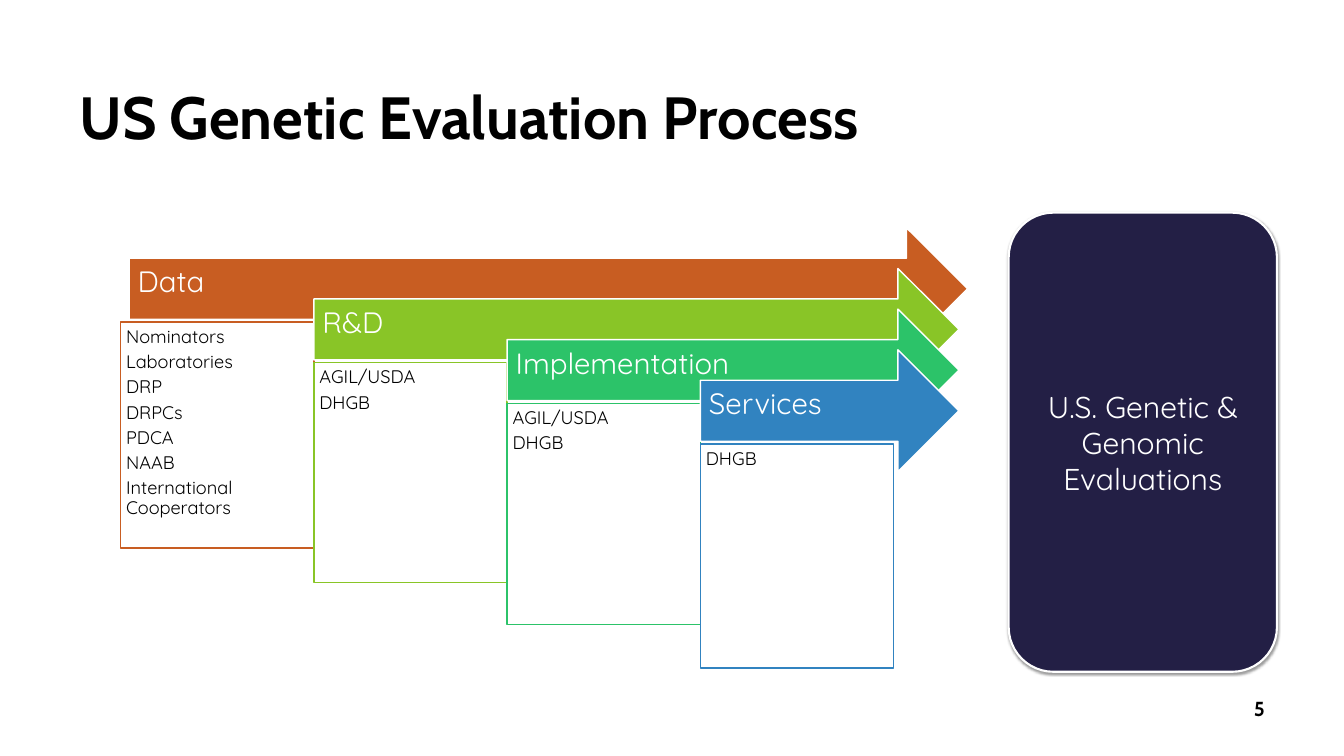
from lxml import etree
from pptx import Presentation
from pptx.dml.color import RGBColor as Rgb
from pptx.enum.shapes import MSO_SHAPE as Form
from pptx.enum.text import MSO_ANCHOR as Anchor, MSO_AUTO_SIZE as Auto, PP_ALIGN as Align
from pptx.oxml import parse_xml
from pptx.oxml.ns import nsdecls, qn
from pptx.util import Inches, Pt

WIDE, HIGH = 26.65, 15
HEAD, BODY = "Cabin", "Quicksand"
WHITE, BLACK, NAVY = "FFFFFF", "000000", "231F45"
PAD = (0.24, 0.12, 0.24, 0.12)
STAGES = [
    ("Data", "C85D22", 29.87,
     ["Nominators", "Laboratories", "DRP", "DRPCs", "PDCA", "NAAB", "International Cooperators"]),
    ("R&D", "89C527", 29.07, ["AGIL/USDA", "DHGB"]),
    ("Implementation", "2CC369", 29.27, ["AGIL/USDA", "DHGB"]),
    ("Services", "3183C0", 29.6, ["DHGB"]),
]
LEFT, TOP = 8.97, 30.13
STEP, DROP = 14.38, 5.38
TIP, SHIFT = 71.35, 0.64


def color(code):
    """Turn a hex string into a colour."""
    return Rgb.from_string(code)


def write(shape, lines, font=BODY, size=26, ink=BLACK, bold=False, align=Align.LEFT,
          anchor=Anchor.MIDDLE, pad=PAD, lead=1.0, after=0):
    """Fill a shape with unbulleted paragraphs in one format."""
    frame = shape.text_frame
    frame.word_wrap, frame.auto_size, frame.vertical_anchor = True, Auto.NONE, anchor
    frame.margin_left, frame.margin_top, frame.margin_right, frame.margin_bottom = map(Inches, pad)
    for i, line in enumerate(lines):
        para = frame.add_paragraph() if i else frame.paragraphs[0]
        props = para._p.get_or_add_pPr()
        props.set("marL", "0")
        props.set("indent", "0")
        etree.SubElement(props, qn("a:buNone"))
        para.alignment, para.line_spacing = align, lead
        para.space_before, para.space_after = Pt(0), Pt(after)
        run = para.add_run()
        run.text = line
        run.font.name, run.font.size, run.font.bold = font, Pt(size), bold
        run.font.color.rgb = color(ink)


class Deck:
    """Holds the style and the current slide, placed in percent of its size."""

    def __init__(self):
        """Open a slide with a title and four list placeholders."""
        self.show = Presentation()
        self.show.slide_width, self.show.slide_height = Inches(WIDE), Inches(HIGH)
        self.slide = self.show.slides.add_slide(self.show.slide_layouts[4])
        self.lists = [p for p in self.slide.placeholders if p.placeholder_format.idx]

    def area(self, x, y, w, h):
        """Turn percent shares into slide lengths."""
        return [Inches(part * full / 100) for part, full in zip((x, y, w, h), (WIDE, HIGH) * 2)]

    def move(self, shape, *box):
        """Place a shape on the slide."""
        shape.left, shape.top, shape.width, shape.height = self.area(*box)

    def paint(self, shape, fill, edge, width=2):
        """Give a shape its fill and outline."""
        shape.fill.solid()
        shape.fill.fore_color.rgb = color(fill)
        shape.line.color.rgb = color(edge)
        shape.line.width = Pt(width)

    def title(self, text, *box):
        """Set the slide title."""
        head = self.slide.shapes.title
        self.move(head, *box)
        write(head, [text], font=HEAD, size=85, bold=True, anchor=Anchor.BOTTOM)

    def arrow(self, text, fill, *box):
        """Draw a labelled stage arrow."""
        shape = self.slide.shapes.add_shape(Form.RIGHT_ARROW, *self.area(*box))
        shape.shadow.inherit = False
        self.paint(shape, fill, WHITE)
        write(shape, [text], size=42, ink=WHITE, pad=(0.17, 0.17, 0.28, 0.38), lead=0.9)

    def list(self, index, lines, edge, *box):
        """Set one framed list."""
        shape = self.lists[index]
        self.move(shape, *box)
        self.paint(shape, WHITE, edge)
        write(shape, lines, anchor=Anchor.TOP, pad=(0.11,) * 4, lead=0.9, after=8)

    def panel(self, text, *box):
        """Draw the rounded result panel with a soft shadow."""
        shape = self.slide.shapes.add_shape(Form.FLOWCHART_ALTERNATE_PROCESS, *self.area(*box))
        shape.shadow.inherit = False
        self.paint(shape, NAVY, WHITE, 3)
        glow = parse_xml(
            f'<a:outerShdw {nsdecls("a")} blurRad="{Pt(3.1)}" dist="{Pt(1.6)}" dir="5400000" '
            f'rotWithShape="0"><a:srgbClr val="{BLACK}"><a:alpha val="38000"/></a:srgbClr></a:outerShdw>')
        shape._element.spPr.find(qn("a:effectLst")).append(glow)
        write(shape, [text], size=43, ink=WHITE, align=Align.CENTER)

    def number(self, text, *box):
        """Add the page number."""
        shape = self.slide.shapes.add_textbox(*self.area(*box))
        write(shape, [text], font=HEAD, size=29, bold=True, align=Align.RIGHT)


def main():
    """Build the process slide and save it."""
    deck = Deck()
    deck.title("US Genetic Evaluation Process", 5, 1.4, 90, 19.47)
    for i, (name, hue, tall, lines) in enumerate(STAGES):
        x, y = LEFT + i * STEP, TOP + i * DROP
        shift = 0 if i else SHIFT
        deck.list(i, lines, hue, x, y + 12.47, STEP, tall)
        deck.arrow(name, hue, x + shift, y, TIP - x, 16.13)
    deck.panel("U.S. Genetic & Genomic Evaluations", 75.05, 28.13, 19.96, 60.73)
    deck.number("5", 71.67, 91.07, 23.34, 5.33)
    deck.show.save("out.pptx")


if __name__ == "__main__":
    main()
